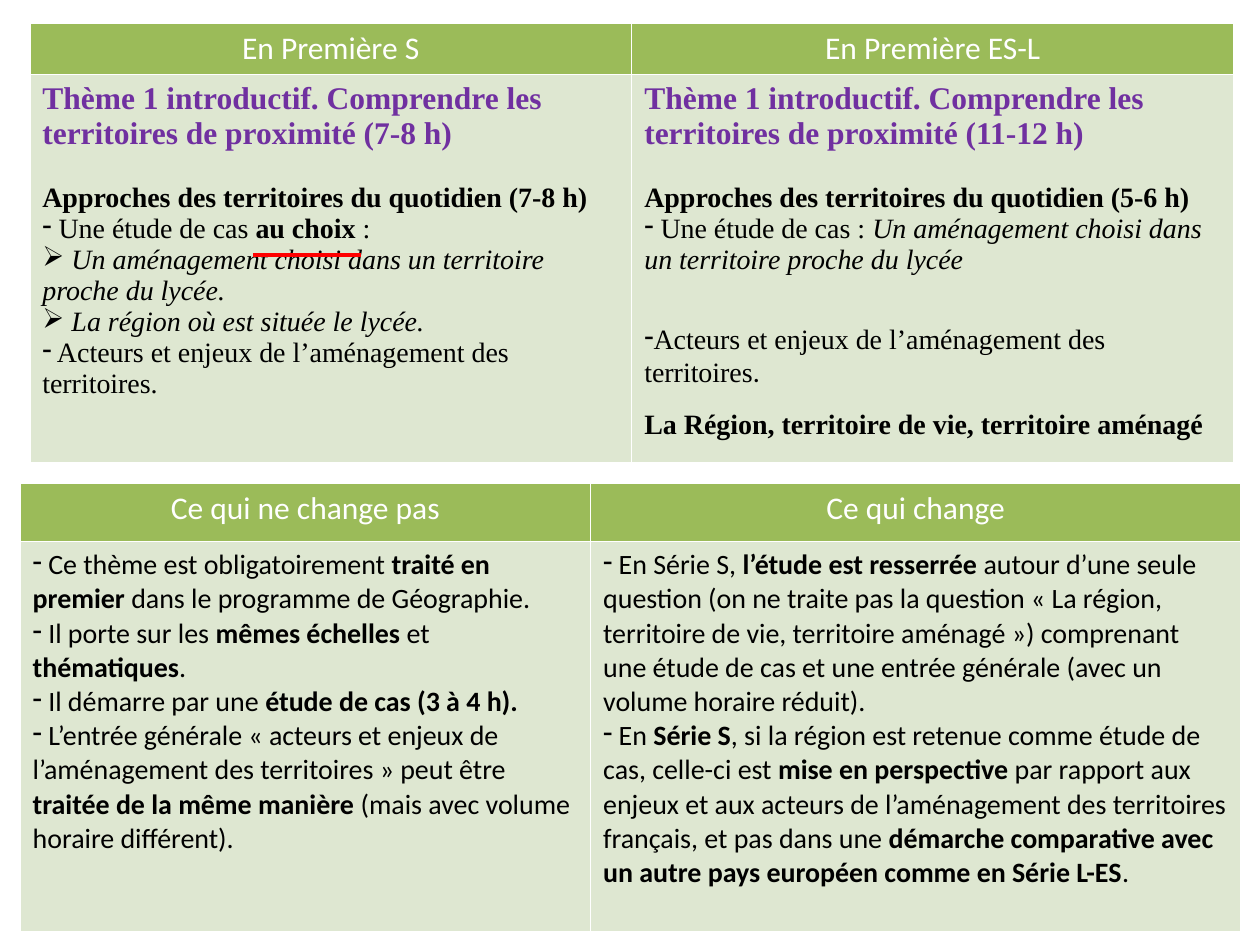
from dataclasses import dataclass

from lxml import etree
from pptx import Presentation
from pptx.dml.color import RGBColor
from pptx.enum.shapes import MSO_CONNECTOR
from pptx.enum.text import PP_ALIGN
from pptx.oxml.ns import qn
from pptx.util import Pt

CENTER = PP_ALIGN.CENTER
STRAIGHT = MSO_CONNECTOR.STRAIGHT
BLANK_LAYOUT = 6


@dataclass(frozen=True)
class Theme:
    sans: str = "Calibri"
    serif: str = "Times New Roman"
    white: RGBColor = RGBColor(0xFF, 0xFF, 0xFF)
    black: RGBColor = RGBColor(0, 0, 0)
    purple: RGBColor = RGBColor(0x70, 0x30, 0xA0)
    red: RGBColor = RGBColor(0xFF, 0, 0)
    header_fill: RGBColor = RGBColor(0x9B, 0xBB, 0x59)
    body_fill: RGBColor = RGBColor(0xDE, 0xE7, 0xD1)
    heading_size: int = 18
    body_size: int = 16


THEME = Theme()


@dataclass
class Span:
    text: str
    bold: bool = False
    italic: bool = False
    font: str = ""


@dataclass
class Line:
    spans: list
    bullet: str = ""
    space_before: float = 0
    size: int = THEME.body_size
    color: RGBColor = THEME.black


def bold(text):
    return Span(text, bold=True)


def italic(text):
    return Span(text, italic=True)


def theme_title(text):
    return Line([bold(text)], size=THEME.heading_size, color=THEME.purple)


def item(*parts, bullet="-", space_before=0):
    """Bulleted line made of plain strings and styled spans."""
    spans = [Span(part) if isinstance(part, str) else part for part in parts]
    return Line(spans, bullet, space_before)


COURSES = {
    "En Première S": [
        theme_title("Thème 1 introductif. Comprendre les territoires de proximité (7-8 h)"),
        Line([bold("Approches des territoires du quotidien (7-8 h)")], space_before=18),
        item(" Une étude de cas ", bold("au choix "), ":"),
        item(italic(" Un aménagement choisi dans un territoire proche du lycée."), bullet="➢"),
        item(italic(" La région où est située le lycée."), bullet="➢"),
        item(" Acteurs et enjeux de l’aménagement des territoires."),
    ],
    "En Première ES-L": [
        theme_title("Thème 1 introductif. Comprendre les territoires de proximité (11-12 h)"),
        Line([bold("Approches des territoires du quotidien (5-6 h)")], space_before=18),
        item(" Une étude de cas : ",
             italic("Un aménagement choisi dans un territoire proche du lycée")),
        item("Acteurs et enjeux de l’aménagement des territoires",
             Span(".", font=THEME.sans), space_before=28),
        Line([bold("La Région, territoire de vie, territoire aménagé")], space_before=11),
    ],
}

CHANGES = {
    "Ce qui ne change pas": [
        item(" Ce thème est obligatoirement ", bold("traité en premier "),
             "dans le programme de Géographie."),
        item(" Il porte sur les ", bold("mêmes échelles "), "et ", bold("thématiques"), "."),
        item(" Il démarre par une ", bold("étude de cas (3 à 4 h).")),
        item(" L’entrée générale « acteurs et enjeux de l’aménagement des territoires » peut être ",
             bold("traitée de la même manière"), " (mais avec volume horaire différent)."),
    ],
    "Ce qui change": [
        item(" En Série S, ", bold("l’étude est resserrée "),
             "autour d’une seule question (on ne traite pas la question « La région, territoire "
             "de vie, territoire aménagé ») comprenant une étude de cas et une entrée générale "
             "(avec un volume horaire réduit)."),
        item(" En ", bold("Série S"), ", si la région est retenue comme étude de cas, celle-ci est ",
             bold("mise en perspective"),
             " par rapport aux enjeux et aux acteurs de l’aménagement des territoires français, "
             "et pas dans une ",
             bold("démarche comparative avec un autre pays européen comme en Série L-ES"), "."),
    ],
}


def set_bullet(paragraph, character):
    """Bullet directly followed by the text, without hanging indent."""
    properties = paragraph._p.get_or_add_pPr()
    properties.set("marL", "0")
    properties.set("indent", "0")
    etree.SubElement(properties, qn("a:buChar")).set("char", character)


def write_line(paragraph, line, font_name):
    paragraph.space_before = Pt(line.space_before)
    if line.bullet:
        set_bullet(paragraph, line.bullet)
    for span in line.spans:
        run = paragraph.add_run()
        run.text = span.text
        font = run.font
        font.name = span.font or font_name
        font.size = Pt(line.size)
        font.bold, font.italic = span.bold, span.italic
        font.color.rgb = line.color


def fill_cell(cell, lines, font_name, fill):
    cell.fill.solid()
    cell.fill.fore_color.rgb = fill
    frame = cell.text_frame
    for index, line in enumerate(lines):
        paragraph = frame.add_paragraph() if index else frame.paragraphs[0]
        write_line(paragraph, line, font_name)


def add_comparison(slide, content, left, top, widths, heights, body_font):
    """Table with one headed column of text per entry of content."""
    shape = slide.shapes.add_table(2, len(content), Pt(left), Pt(top),
                                   Pt(sum(widths)), Pt(sum(heights)))
    table = shape.table
    for row, height in zip(table.rows, heights):
        row.height = Pt(height)
    for index, (heading, lines) in enumerate(content.items()):
        table.columns[index].width = Pt(widths[index])
        header = table.cell(0, index)
        title = Line([Span(heading)], size=THEME.heading_size, color=THEME.white)
        fill_cell(header, [title], THEME.sans, THEME.header_fill)
        header.text_frame.paragraphs[0].alignment = CENTER
        fill_cell(table.cell(1, index), lines, body_font, THEME.body_fill)


def add_underline(slide, left, top, width):
    connector = slide.shapes.add_connector(STRAIGHT, Pt(left), Pt(top),
                                           Pt(left + width), Pt(top))
    connector.line.color.rgb = THEME.red
    connector.line.width = Pt(2.25)
    etree.SubElement(connector._element.spPr, qn("a:effectLst"))


def main():
    presentation = Presentation()
    presentation.slide_width, presentation.slide_height = Pt(720), Pt(540)
    slide = presentation.slides.add_slide(presentation.slide_layouts[BLANK_LAYOUT])
    add_comparison(slide, COURSES, 17, 13.5, (344, 344), (28.5, 222), THEME.serif)
    add_comparison(slide, CHANGES, 11.5, 276, (326, 371.5), (33.5, 223), THEME.sans)
    add_underline(slide, 144.5, 145.5, 62)
    presentation.save("out.pptx")


if __name__ == "__main__":
    main()
